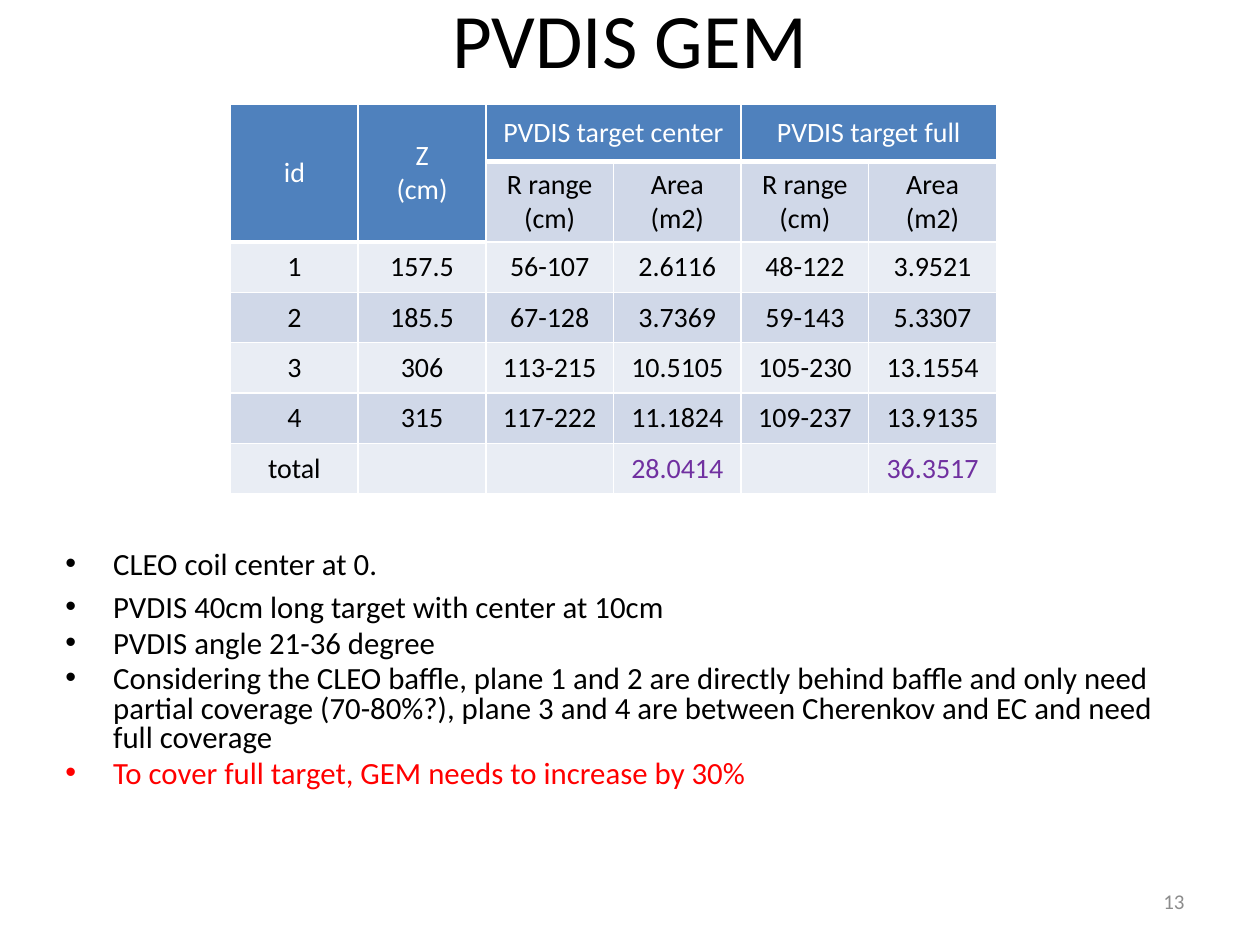
"""Build the PVDIS GEM slide with its coverage table and notes."""
from lxml import etree
from pptx import Presentation
from pptx.dml.color import RGBColor
from pptx.enum import text as t
from pptx.oxml import ns
from pptx.util import Inches, Pt

COLORS = {
    "black": "000000", "white": "FFFFFF", "red": "FF0000", "purple": "7030A0",
    "gray": "8C8C8C", "header": "4F81BD", "dark": "D0D8E8", "light": "E9EDF4",
}
ALIGN, MIDDLE = t.PP_ALIGN, t.MSO_ANCHOR.MIDDLE


def write(tf, lines, size, color, **formats):
    for i, line in enumerate(lines):
        p = tf.paragraphs[0] if i == 0 else tf.add_paragraph()
        for name, value in formats.items():
            setattr(p, name, value)
        r = p.add_run()
        r.text = line
        for name, value in {"name": "Calibri", "size": Pt(size), "bold": False}.items():
            setattr(r.font, name, value)
        r.font.color.rgb = RGBColor.from_string(COLORS[color])


def add_box(left, top, width, height, anchor):
    box = s.shapes.add_textbox(Inches(left), Inches(top), Inches(width), Inches(height))
    tf = box.text_frame
    for name, value in {"word_wrap": True, "vertical_anchor": anchor}.items():
        setattr(tf, name, value)
    return tf


prs = Presentation()
prs.slide_width, prs.slide_height = Inches(10), Inches(7.5)
s = prs.slides.add_slide(prs.slide_layouts[6])

write(add_box(0.5, -0.33, 9, 1.25, MIDDLE), ["PVDIS GEM"], 44, "black", alignment=ALIGN.CENTER)

rows = [
    ["id", "Z\n(cm)", "PVDIS target center", None, "PVDIS target full", None],
    [None, None] + ["R range\n(cm)", "Area\n(m2)"] * 2,
    ["1", "157.5", "56-107", "2.6116", "48-122", "3.9521"],
    ["2", "185.5", "67-128", "3.7369", "59-143", "5.3307"],
    ["3", "306", "113-215", "10.5105", "105-230", "13.1554"],
    ["4", "315", "117-222", "11.1824", "109-237", "13.9135"],
    ["total", "", "", "28.0414", "", "36.3517"],
]
heights = [0.45, 0.64] + [0.4] * 5
table = s.shapes.add_table(
    len(rows), 6, Inches(1.83), Inches(0.83), Inches(6.08), Inches(sum(heights))
).table
for col in table.columns:
    col.width = Inches(6.08 / 6)
for row, height in zip(table.rows, heights):
    row.height = Inches(height)

for i, values in enumerate(rows):
    for j, value in enumerate(values):
        cell = table.cell(i, j)
        header = i == 0 or value is None
        tcPr = cell._tc.get_or_add_tcPr()
        for side in "LRTB":
            points = 3 if side == "B" and header else 1
            ln = etree.SubElement(tcPr, ns.qn(f"a:ln{side}"), w=str(Pt(points)))
            fill = etree.SubElement(ln, ns.qn("a:solidFill"))
            etree.SubElement(fill, ns.qn("a:srgbClr"), val=COLORS["white"])
        cell.vertical_anchor = MIDDLE
        cell.fill.solid()
        shade = "header" if header else "dark" if i % 2 else "light"
        cell.fill.fore_color.rgb = RGBColor.from_string(COLORS[shade])
        if value is not None:
            color = "white" if header else "black"
            if i == len(rows) - 1 and j > 0:
                color = "purple"
            write(cell.text_frame, value.split("\n"), 16, color, alignment=ALIGN.CENTER)

for first, last in [((0, 0), (1, 0)), ((0, 1), (1, 1)), ((0, 2), (0, 3)), ((0, 4), (0, 5))]:
    table.cell(*first).merge(table.cell(*last))

notes = [
    "CLEO coil center at 0.",
    "PVDIS 40cm long target with center at 10cm",
    "PVDIS angle 21-36 degree",
    "Considering the CLEO baffle, plane 1 and 2 are directly behind baffle and only need "
    "partial coverage (70-80%?), plane 3 and 4 are between Cherenkov and EC and need full coverage",
    "To cover full target, GEM needs to increase by 30%",
]
tf = add_box(0.42, 4.33, 9, 2.08, t.MSO_ANCHOR.TOP)
write(tf, notes, 17.6, "black", line_spacing=0.8, space_before=Pt(3.5))
tf.paragraphs[1].line_spacing = 1.0
tf.paragraphs[-1].runs[0].font.color.rgb = RGBColor.from_string(COLORS["red"])
for p in tf.paragraphs:
    pPr = p._p.get_or_add_pPr()
    for name, inches in {"marL": 0.38, "indent": -0.38}.items():
        pPr.set(name, str(Inches(inches)))
    etree.SubElement(pPr, ns.qn("a:buFont"), typeface="Arial")
    etree.SubElement(pPr, ns.qn("a:buChar"), char="•")

write(add_box(7.17, 6.95, 2.33, 0.4, MIDDLE), ["13"], 12, "gray", alignment=ALIGN.RIGHT)

prs.save("out.pptx")
